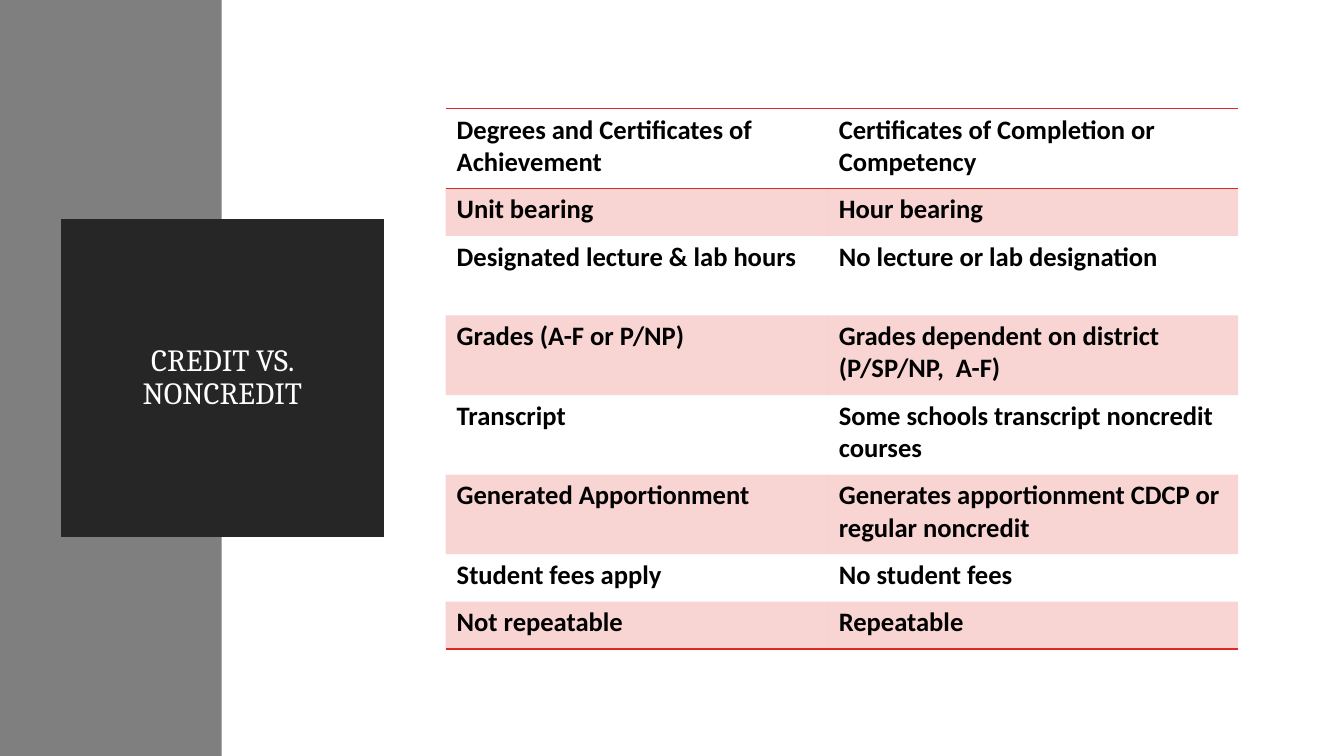
from lxml import etree
from pptx import Presentation
from pptx import util as u
from pptx.dml.color import RGBColor
from pptx.enum import shapes, text
from pptx.oxml import ns

RED = "E02826"
DARK = "262626"
NO_STYLE = "{2D5ABB26-0587-4C30-8999-92F81FD0307C}"


def paint(fill, color):
    fill.solid()
    fill.fore_color.rgb = RGBColor.from_string(color)


def add_rule(cell, side):
    """Draw a one-point red rule on one side of a cell."""
    rule = etree.SubElement(cell._tc.get_or_add_tcPr(), ns.qn(f"a:{side}"), w=str(u.Pt(1)))
    solid = etree.SubElement(rule, ns.qn("a:solidFill"))
    etree.SubElement(solid, ns.qn("a:srgbClr"), val=RED)


deck = Presentation()
deck.slide_width, deck.slide_height = u.Inches(13.33), u.Inches(7.5)
slide = deck.slides.add_slide(deck.slide_layouts[5])

# Grey side band, a sixth of the slide wide, behind the title
band = slide.shapes.add_shape(
    shapes.MSO_SHAPE.RECTANGLE, 0, 0, u.Inches(2.2), deck.slide_height)
band.shadow.inherit = False
paint(band.fill, "7F7F7F")
band.line.fill.background()

# Title block
title = slide.shapes.title
slide.shapes._spTree.append(title._element)
title.left, title.top = u.Inches(0.7), u.Inches(2.27)
title.width, title.height = u.Inches(3.01), u.Inches(2.96)
paint(title.fill, DARK)
paint(title.line.fill, DARK)
title.line.width = u.Pt(13.75)
etree.SubElement(title.line._ln, ns.qn("a:miter"), lim="800000")
title.text_frame.text = "CREDIT VS. NONCREDIT"
title.text_frame.word_wrap = True
title.text_frame.auto_size = text.MSO_AUTO_SIZE.NONE
title.text_frame.vertical_anchor = text.MSO_ANCHOR.MIDDLE
heading = title.text_frame.paragraphs[0]
heading.alignment = text.PP_ALIGN.CENTER
heading.line_spacing = 0.9
heading_font = heading.runs[0].font
heading_font.name, heading_font.size = "Cambria", u.Pt(22)
heading_font.color.rgb = RGBColor.from_string("FFFFFF")

# Comparison table: credit on the left, noncredit on the right
ONE_LINE, TWO_LINES = 0.47, 0.79
comparison = [
    (TWO_LINES, "Degrees and Certificates of Achievement",
     "Certificates of Completion or Competency"),
    (ONE_LINE, "Unit bearing", "Hour bearing"),
    (TWO_LINES, "Designated lecture & lab hours", "No lecture or lab designation"),
    (TWO_LINES, "Grades (A-F or P/NP)", "Grades dependent on district (P/SP/NP,  A-F)"),
    (TWO_LINES, "Transcript", "Some schools transcript noncredit courses"),
    (TWO_LINES, "Generated Apportionment",
     "Generates apportionment CDCP or regular noncredit"),
    (ONE_LINE, "Student fees apply", "No student fees"),
    (ONE_LINE, "Not repeatable", "Repeatable"),
]
last = len(comparison) - 1
table = slide.shapes.add_table(
    len(comparison), 2, u.Inches(4.42), u.Inches(1.08),
    u.Inches(7.86), u.Inches(5.33)).table
table.horz_banding = False
table._tbl.tblPr.find(ns.qn("a:tableStyleId")).text = NO_STYLE
for column, width in zip(table.columns, (3.79, 4.07)):
    column.width = u.Inches(width)

for row, (height, *entries) in enumerate(comparison):
    table.rows[row].height = u.Inches(height)
    for col, entry in enumerate(entries):
        cell = table.cell(row, col)
        cell.margin_left = cell.margin_right = u.Inches(0.11)
        cell.margin_top = cell.margin_bottom = u.Inches(0.05)
        cell.text_frame.text = entry
        font = cell.text_frame.paragraphs[0].runs[0].font
        font.name, font.size, font.bold = "Calibri", u.Pt(19), True
        font.color.rgb = RGBColor.from_string("000000")

        # Rules above and below the header and below the last row
        if row == 0:
            add_rule(cell, "lnT")
        if row in (0, last):
            add_rule(cell, "lnB")

        # Every second row carries a light red tint
        if row % 2:
            paint(cell.fill, RED)
            tint = cell._tc.tcPr.find(ns.qn("a:solidFill"))[0]
            etree.SubElement(tint, ns.qn("a:alpha"), val="20000")
        else:
            cell.fill.background()

deck.save("out.pptx")
